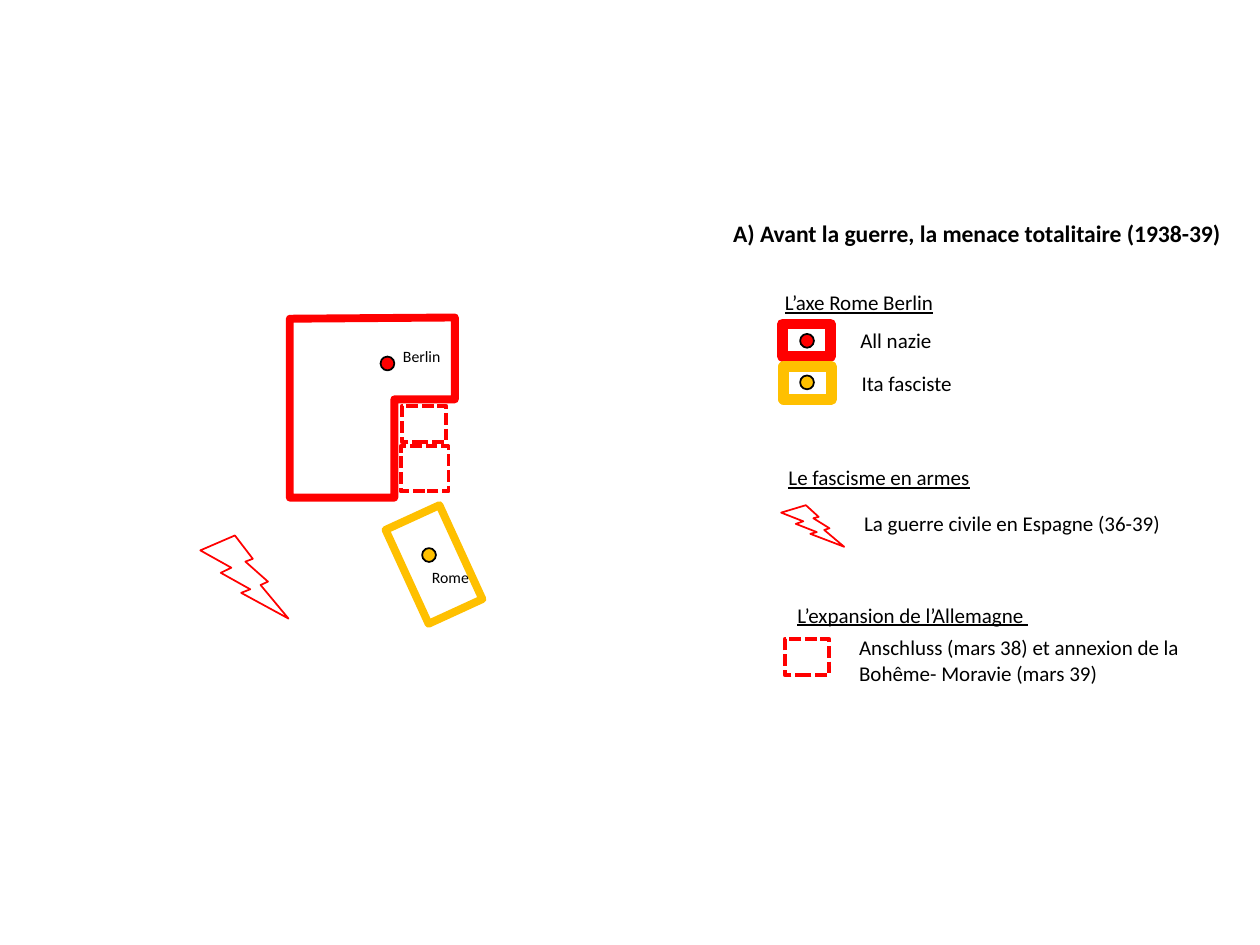
import pptx
import pptx.dml.color
import pptx.enum.dml
import pptx.enum.shapes
import pptx.enum.text
import pptx.util

Inches = pptx.util.Inches
Pt = pptx.util.Pt
RGBColor = pptx.dml.color.RGBColor
MSO_SHAPE = pptx.enum.shapes.MSO_SHAPE

RED = RGBColor(0xFF, 0x00, 0x00)
GOLD = RGBColor(0xFF, 0xC0, 0x00)
BLACK = RGBColor(0x00, 0x00, 0x00)

GERMANY = [(3.61, 2.52), (2.3, 2.53), (2.3, 3.95),
           (3.13, 3.95), (3.13, 3.17), (3.61, 3.17)]


def style(sp, line, width, fill=None):
    sp.shadow.inherit = False
    if fill is None:
        sp.fill.background()
    else:
        sp.fill.solid()
        sp.fill.fore_color.rgb = fill
    sp.line.color.rgb = line
    sp.line.width = Pt(width)


def add_preset(s, kind, left, top, width, height, line, weight, fill=None):
    sp = s.shapes.add_shape(kind, Inches(left), Inches(top), Inches(width), Inches(height))
    style(sp, line, weight, fill)
    return sp


def add_country(s, left, top, width, height, color, weight, rotation=0):
    sp = add_preset(s, MSO_SHAPE.RECTANGLE, left, top, width, height, color, weight)
    sp.rotation = rotation


def add_annexation(s, left, top, width=0.35, height=0.29):
    sp = add_preset(s, MSO_SHAPE.RECTANGLE, left, top, width, height, RED, 2.25)
    sp.line.dash_style = pptx.enum.dml.MSO_LINE.SQUARE_DOT


def add_capital(s, left, top, color):
    add_preset(s, MSO_SHAPE.OVAL, left, top, 0.11, 0.11, BLACK, 1, color)


def add_war(s, left, top, width, height):
    add_preset(s, MSO_SHAPE.LIGHTNING_BOLT, left, top, width, height, RED, 1)


def add_outline(s, points, color, weight):
    start, *rest = [(Inches(x), Inches(y)) for x, y in points]
    builder = s.shapes.build_freeform(*start)
    builder.add_line_segments(rest, close=True)
    style(builder.convert_to_shape(), color, weight)


def add_text(s, text, left, top, width, height=0.3, size=12,
             bold=False, underline=False, wrap=False):
    box = s.shapes.add_textbox(Inches(left), Inches(top), Inches(width), Inches(height))
    tf = box.text_frame
    tf.word_wrap = wrap
    tf.auto_size = pptx.enum.text.MSO_AUTO_SIZE.SHAPE_TO_FIT_TEXT
    r = tf.paragraphs[0].add_run()
    r.text = text
    r.font.name = "Calibri"
    r.font.size = Pt(size)
    r.font.color.rgb = BLACK
    r.font.bold = bold
    r.font.underline = underline


def draw_map(s):
    add_outline(s, GERMANY, RED, 4.5)
    add_annexation(s, 3.18, 3.54, 0.38, 0.36)
    add_annexation(s, 3.19, 3.22)
    add_country(s, 3.21, 4.07, 0.47, 0.82, GOLD, 4.5, rotation=335.4)
    add_capital(s, 3.02, 2.83, RED)
    add_capital(s, 3.35, 4.35, GOLD)
    add_text(s, "Berlin", 3.1, 2.7, 0.5, 0.25, size=9)
    add_text(s, "Rome", 3.33, 4.46, 0.5, 0.25, size=9)
    add_war(s, 1.59, 4.25, 0.7, 0.66)


def draw_legend(s):
    add_text(s, "A) Avant la guerre, la menace totalitaire (1938-39)",
             5.72, 1.69, 4.12, 0.33, size=13.5, bold=True)

    add_text(s, "L’axe Rome Berlin", 6.13, 2.25, 1.39, underline=True)
    add_country(s, 6.21, 2.57, 0.38, 0.26, RED, 6)
    add_capital(s, 6.35, 2.65, RED)
    add_text(s, "All nazie", 6.73, 2.55, 0.77)
    add_country(s, 6.22, 2.91, 0.38, 0.26, GOLD, 6)
    add_capital(s, 6.35, 2.98, GOLD)
    add_text(s, "Ita fasciste", 6.74, 2.89, 0.93)

    add_text(s, "Le fascisme en armes", 6.16, 3.64, 1.66, underline=True)
    add_war(s, 6.2, 4.01, 0.5, 0.33)
    add_text(s, "La guerre civile en Espagne (36-39)", 6.76, 4, 2.58)

    add_text(s, "L’expansion de l’Allemagne ", 6.23, 4.73, 2.06, underline=True)
    add_annexation(s, 6.23, 5.07)
    add_text(s, "Anschluss (mars 38) et annexion de la Bohême- Moravie (mars 39)",
             6.72, 4.99, 3.07, 0.5, wrap=True)


def main():
    prs = pptx.Presentation()
    prs.slide_width = Inches(10)
    prs.slide_height = Inches(7.5)
    s = prs.slides.add_slide(prs.slide_layouts[6])
    draw_map(s)
    draw_legend(s)
    prs.save("out.pptx")


if __name__ == "__main__":
    main()
